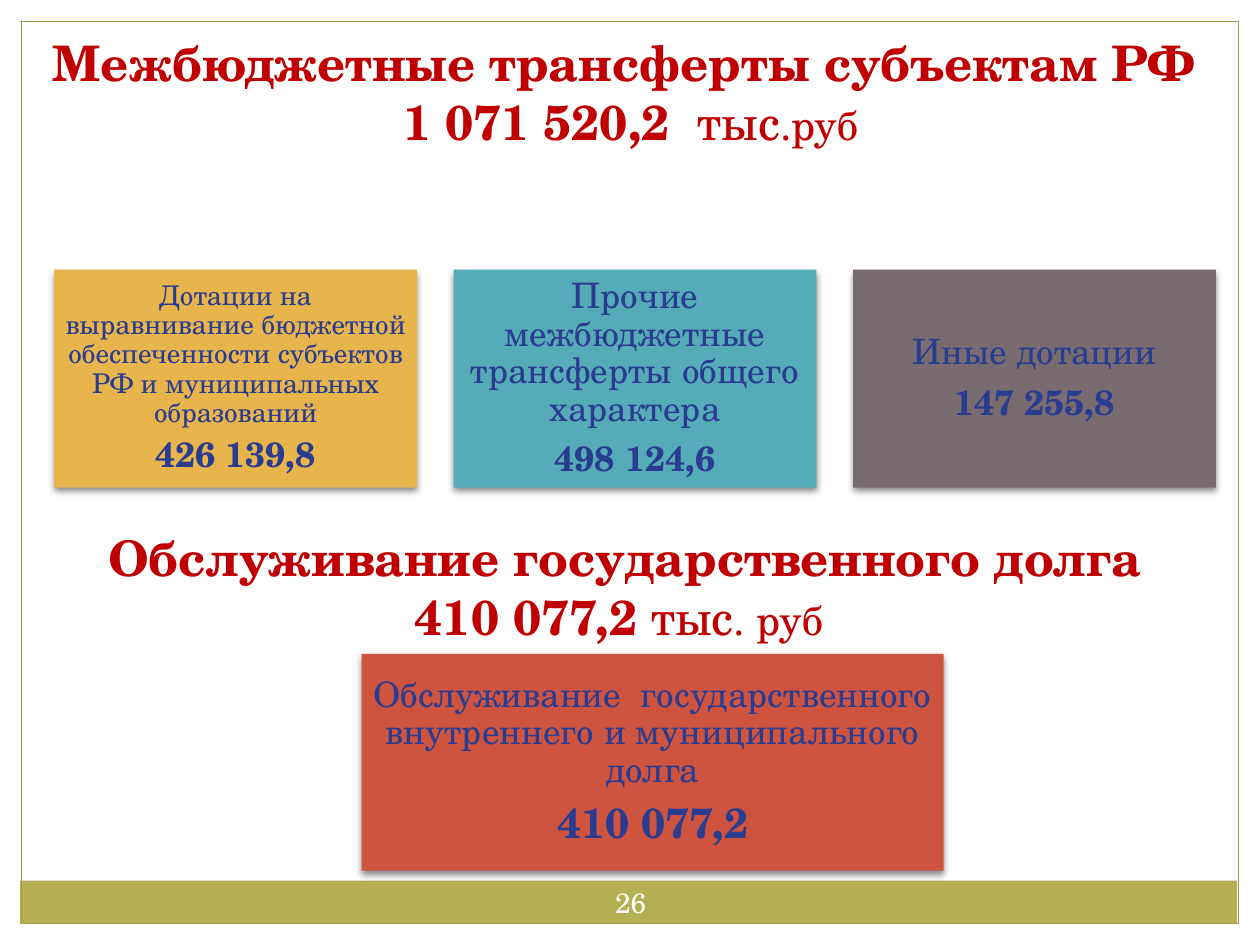
"""Build the slide on interbudgetary transfers and state debt service."""
from dataclasses import dataclass

from lxml.etree import SubElement
from pptx import Presentation
from pptx.dml.color import RGBColor
from pptx.enum.shapes import MSO_SHAPE
from pptx.enum.text import MSO_ANCHOR, PP_ALIGN
from pptx.oxml.ns import qn
from pptx.util import Inches, Pt


@dataclass(frozen=True)
class Theme:
    font: str = "TeX Gyre Schola"
    heading: str = "C00000"
    card_text: str = "293C8F"
    band: str = "B5AE53"
    frame: str = "A09A49"
    white: str = "FFFFFF"
    yellow: str = "E8B54D"
    teal: str = "55ABB8"
    gray: str = "786C71"
    red: str = "CF543F"
    heading_size: float = 28
    large_size: float = 24
    card_size: float = 20
    number_size: float = 16
    small_size: float = 15.5


theme = Theme()


def add_text(shape, paragraphs, color, margin=None, anchor=MSO_ANCHOR.TOP, line_spacing=None, space_after=0):
    frame = shape.text_frame
    frame.word_wrap = True
    frame.vertical_anchor = anchor
    if margin is not None:
        frame.margin_left = frame.margin_right = Inches(margin)
        frame.margin_top = frame.margin_bottom = Inches(margin)
    for index, runs in enumerate(paragraphs):
        paragraph = frame.add_paragraph() if index else frame.paragraphs[0]
        paragraph.alignment = PP_ALIGN.CENTER
        paragraph.line_spacing = line_spacing
        paragraph.space_after = Pt(space_after * runs[0][1])
        for text, size, bold in runs:
            run = paragraph.add_run()
            run.text = text
            run.font.name = theme.font
            run.font.size = Pt(size)
            run.font.bold = bold
            run.font.color.rgb = RGBColor.from_string(color)


def add_rectangle(slide, left, top, width, height, fill=None, line=None):
    shape = slide.shapes.add_shape(
        MSO_SHAPE.RECTANGLE, Inches(left), Inches(top), Inches(width), Inches(height))
    shape.shadow.inherit = False
    if fill:
        shape.fill.solid()
        shape.fill.fore_color.rgb = RGBColor.from_string(fill)
    else:
        shape.fill.background()
    if line:
        shape.line.color.rgb = RGBColor.from_string(line)
        shape.line.width = Pt(0.75)
    else:
        shape.line.fill.background()
    return shape


presentation = Presentation()
presentation.slide_width = Inches(10)
presentation.slide_height = Inches(7.5)
slide = presentation.slides.add_slide(presentation.slide_layouts[6])

add_rectangle(slide, 0.16, 6.99, 9.66, 0.34, fill=theme.band)
add_rectangle(slide, 0.17, 0.17, 9.66, 7.16, line=theme.frame)

headings = [
    (0.2, 0.21, 9.61, [
        [("Межбюджетные трансферты субъектам РФ ", theme.heading_size, True)],
        [("1 071 520,2  ", theme.heading_size, True),
         ("тыс", theme.heading_size, False),
         (".руб", theme.large_size, False)],
    ]),
    (0.51, 4.14, 8.9, [
        [("Обслуживание государственного долга 410 077,2 ", theme.heading_size, True),
         ("тыс", theme.heading_size, False),
         (". руб ", theme.large_size, False)],
    ]),
]
for left, top, width, paragraphs in headings:
    heading = slide.shapes.add_textbox(Inches(left), Inches(top), Inches(width), Inches(1.04))
    add_text(heading, paragraphs, theme.heading)

card_left, card_top, card_width, card_height, card_step = 0.43, 2.14, 2.88, 1.73, 3.17
transfers = [
    ("Дотации на выравнивание бюджетной обеспеченности субъектов РФ и муниципальных образований",
     "426 139,8", theme.yellow, theme.small_size, 0.07),
    ("Прочие межбюджетные трансферты общего характера",
     "498 124,6", theme.teal, theme.card_size, 0.08),
    ("Иные дотации", "147 255,8", theme.gray, theme.card_size, 0.08),
]
cards = [
    (card_left + index * card_step, card_top, card_width, card_height,
     label, amount, fill, label_size, theme.card_size, margin)
    for index, (label, amount, fill, label_size, margin) in enumerate(transfers)
]
cards.append((2.87, 5.19, 4.62, 1.72,
              "Обслуживание  государственного внутреннего и муниципального долга",
              "410 077,2", theme.red, theme.card_size, theme.large_size, 0.08))

for left, top, width, height, label, amount, fill, label_size, amount_size, margin in cards:
    card = add_rectangle(slide, left, top, width, height, fill=fill)
    effects = card._element.spPr.find(qn("a:effectLst"))
    shadow = SubElement(effects, qn("a:outerShdw"), blurRad=str(Pt(4)), dist=str(Pt(2)),
                        dir="5400000", rotWithShape="0")
    shadow_color = SubElement(shadow, qn("a:srgbClr"), val="000000")
    SubElement(shadow_color, qn("a:alpha"), val="45000")
    add_text(card, [[(label, label_size, False)], [(amount, amount_size, True)]],
             theme.card_text, margin=margin, anchor=MSO_ANCHOR.MIDDLE,
             line_spacing=0.9, space_after=0.35)

page_number = slide.shapes.add_textbox(Inches(4.67), Inches(6.92), Inches(0.67), Inches(0.48))
add_text(page_number, [[("26", theme.number_size, False)]], theme.white,
         margin=0.05, anchor=MSO_ANCHOR.MIDDLE)

presentation.save("out.pptx")
